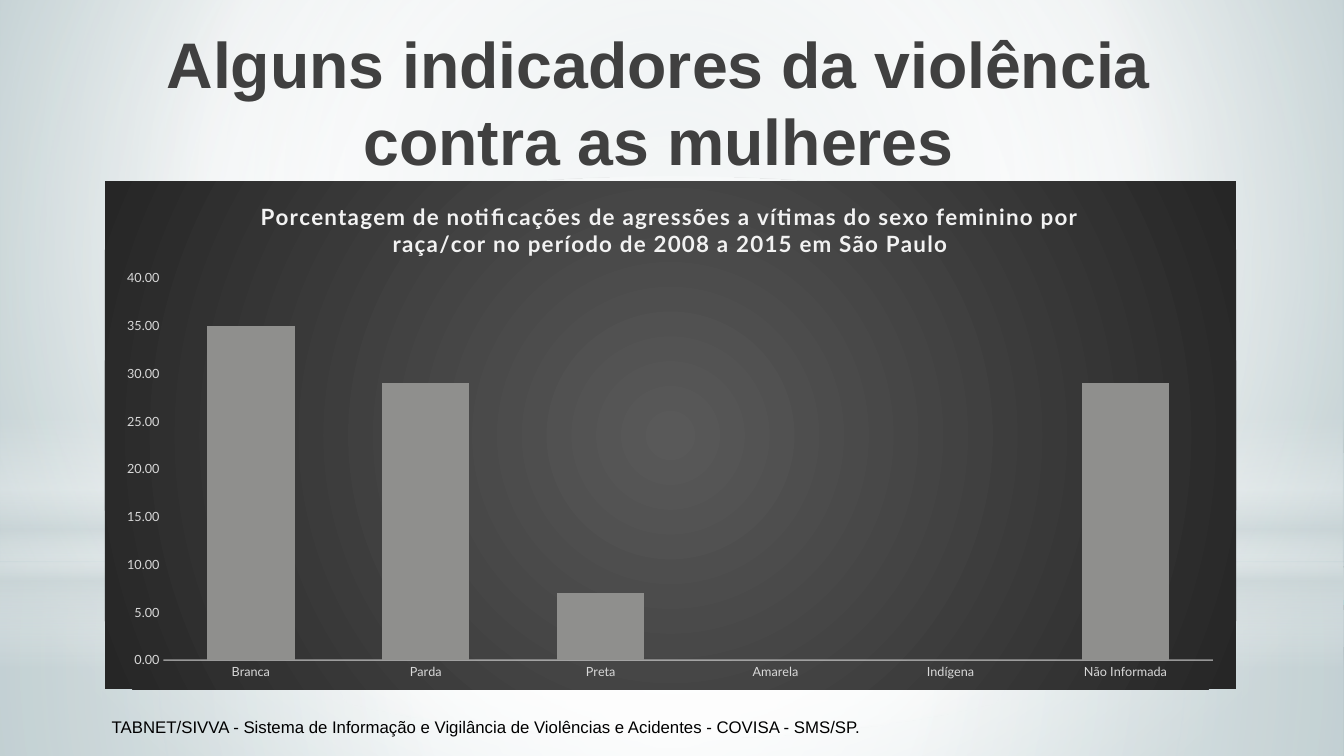
from lxml.etree import SubElement
from pptx import Presentation
from pptx.chart.data import CategoryChartData
from pptx.dml.color import RGBColor
from pptx.enum.chart import XL_CHART_TYPE as ChartType, XL_TICK_MARK as TickMark
from pptx.enum.shapes import MSO_SHAPE as Preset
from pptx.enum.text import MSO_ANCHOR as Anchor, PP_ALIGN as Align
from pptx.oxml import parse_xml
from pptx.oxml.ns import nsdecls, qn
from pptx.util import Inches, Pt

WHITE = RGBColor(0xFF, 0xFF, 0xFF)
BLACK = RGBColor(0x00, 0x00, 0x00)
MIST = RGBColor(0xCD, 0xD7, 0xD9)
PALE_TEAL = RGBColor(0xC2, 0xD0, 0xD3)
TEAL = RGBColor(0x9A, 0xB5, 0xBA)
HEADING = RGBColor(0x40, 0x40, 0x40)
PANEL_CENTRE = RGBColor(0x59, 0x59, 0x59)
PANEL_EDGE = RGBColor(0x26, 0x26, 0x26)
BAR = RGBColor(0x8F, 0x8F, 0x8D)
AXIS_TEXT = RGBColor(0xD9, 0xD9, 0xD9)
CHART_HEADING = RGBColor(0xF2, 0xF2, 0xF2)
CENTRE = (50, 50, 50, 50)
CHART_WIDTH, CHART_HEIGHT = 11.22, 5.04


def paint_gradient(properties, stops, focus=None):
    gradient = parse_xml(f'<a:gradFill {nsdecls("a")} rotWithShape="1"><a:gsLst/></a:gradFill>')
    for position, color, opacity in stops:
        stop = SubElement(gradient[0], qn("a:gs"), pos=str(position * 1000))
        tone = SubElement(stop, qn("a:srgbClr"), val=str(color))
        if opacity < 100:
            SubElement(tone, qn("a:alpha"), val=str(opacity * 1000))
    if focus:
        radial = SubElement(gradient, qn("a:path"), path="circle")
        sides = {side: str(share * 1000) for side, share in zip("ltrb", focus)}
        SubElement(radial, qn("a:fillToRect"), **sides)
    else:
        SubElement(gradient, qn("a:lin"), ang="5400000", scaled="0")
    properties.replace(properties.find(qn("a:solidFill")), gradient)


deck = Presentation()
deck.slide_width, deck.slide_height = Inches(13.33), Inches(7.5)
slide = deck.slides.add_slide(deck.slide_layouts[5])
slide.background.fill.solid()
paint_gradient(slide.element.find(".//" + qn("p:bgPr")),
               [(0, PALE_TEAL, 100), (60, WHITE, 100), (100, TEAL, 100)], (20, 10, 20, 60))

backdrop = [
    (Preset.RECTANGLE, 5.58, 1.92, [(0, WHITE, 91), (37, WHITE, 76), (100, MIST, 79)], CENTRE),
    (Preset.RECTANGLE, 0, 5.58, [(0, WHITE, 89), (48, WHITE, 62), (100, MIST, 79)], CENTRE),
    (Preset.RECTANGLE, 4.12, 2.5, [(0, WHITE, 0), (29, WHITE, 30), (45, MIST, 40),
                                  (55, WHITE, 26), (65, MIST, 60), (100, WHITE, 0)], None),
    (Preset.OVAL, 1.75, 5.58, [(0, WHITE, 100), (56, WHITE, 0)], CENTRE),
]
for preset, top, height, stops, focus in backdrop:
    glow = slide.shapes.add_shape(preset, 0, Inches(top), deck.slide_width, Inches(height))
    glow.shadow.inherit = False
    glow.line.fill.background()
    glow.fill.solid()
    paint_gradient(glow.element.spPr, stops, focus)

credit = slide.shapes.add_textbox(Inches(1.01), Inches(7.06), Inches(11.81), Inches(0.61))
credit.text_frame.word_wrap = True
credit_run = credit.text_frame.paragraphs[0].add_run()
credit_run.text = ("TABNET/SIVVA - Sistema de Informação e Vigilância de Violências e Acidentes"
                   " - COVISA - SMS/SP.")
credit_run.font.size = Pt(12)
credit_run.font.name = "Arial"
credit_run.font.color.rgb = BLACK

notifications = CategoryChartData(number_format="0.00")
notifications.categories = ["Branca", "Parda", "Preta", "Amarela", "Indígena", "Não Informada"]
notifications.add_series("Series 1", (35, 29, 7, 0, 0, 29))
chart = slide.shapes.add_chart(ChartType.COLUMN_CLUSTERED, Inches(1.04), Inches(1.8),
                               Inches(CHART_WIDTH), Inches(CHART_HEIGHT), notifications).chart
chart.has_legend = False
chart.font.name = "Lato"
chart.font.size = Pt(10)
panel = parse_xml(f'<c:spPr {nsdecls("c", "a")}><a:solidFill/><a:ln><a:noFill/></a:ln></c:spPr>')
chart.element.find(qn("c:chart")).addnext(panel)
paint_gradient(panel, [(0, PANEL_CENTRE, 100), (100, PANEL_EDGE, 100)], CENTRE)

chart.has_title = True
chart.chart_title.include_in_layout = False
chart_heading = chart.chart_title.text_frame.paragraphs[0].add_run()
chart_heading.text = ("Porcentagem de notificações de agressões a vítimas do sexo feminino por "
                      "raça/cor no período de 2008 a 2015 em São Paulo")
chart_heading.font.size = Pt(16)
chart_heading.font.bold = True
chart_heading.font.name = "Lato"
chart_heading.font.color.rgb = CHART_HEADING
chart_heading.font._element.set("spc", "100")

plot = chart.plots[0]
plot.gap_width = 100
plot.overlap = -24
plot.vary_by_categories = False
bars = plot.series[0].format
bars.fill.solid()
bars.fill.fore_color.rgb = BAR
bars.line.fill.background()

plot_area = chart.element.find(".//" + qn("c:plotArea"))
for automatic in plot_area.findall(qn("c:layout")):
    plot_area.remove(automatic)
layout = parse_xml(f'<c:layout {nsdecls("c")}><c:manualLayout/></c:layout>')
for tag, value in [("layoutTarget", "inner"), ("xMode", "edge"), ("yMode", "edge"),
                   ("x", 0.58 / CHART_WIDTH), ("y", 0.96 / CHART_HEIGHT),
                   ("w", 10.41 / CHART_WIDTH), ("h", 3.79 / CHART_HEIGHT)]:
    SubElement(layout[0], qn(f"c:{tag}"), val=str(value))
plot_area.insert(0, layout)

races, percentages = chart.category_axis, chart.value_axis
for axis in (races, percentages):
    axis.has_major_gridlines = False
    axis.major_tick_mark = axis.minor_tick_mark = TickMark.NONE
    axis.tick_labels.font.size = Pt(9)
    axis.tick_labels.font.name = "Lato"
    axis.tick_labels.font.color.rgb = AXIS_TEXT
percentages.minimum_scale, percentages.maximum_scale, percentages.major_unit = 0, 40, 5
percentages.tick_labels.number_format = "0.00"
percentages.tick_labels.number_format_is_linked = False
percentages.format.line.fill.background()
races.format.line.width = Pt(1)
races.format.line.color.rgb = CHART_HEADING
baseline_tone = races.format.line._ln.find(".//" + qn("a:srgbClr"))
SubElement(baseline_tone, qn("a:alpha"), val="54000")

title = slide.shapes.title
title.left, title.top = Inches(1.04), Inches(0.19)
title.width, title.height = Inches(10.98), Inches(0.77)
title.text_frame.word_wrap = True
title.text_frame.vertical_anchor = Anchor.TOP
title.text_frame.margin_top = Inches(0.05)
heading = title.text_frame.paragraphs[0]
heading.alignment = Align.CENTER
heading.line_spacing = 1.0
heading_run = heading.add_run()
heading_run.text = "Alguns indicadores da violência contra as mulheres"
heading_run.font.size = Pt(46)
heading_run.font.bold = True
heading_run.font.name = "Arial"
heading_run.font.color.rgb = HEADING
slide.shapes.element.append(title.element)

deck.save("out.pptx")
